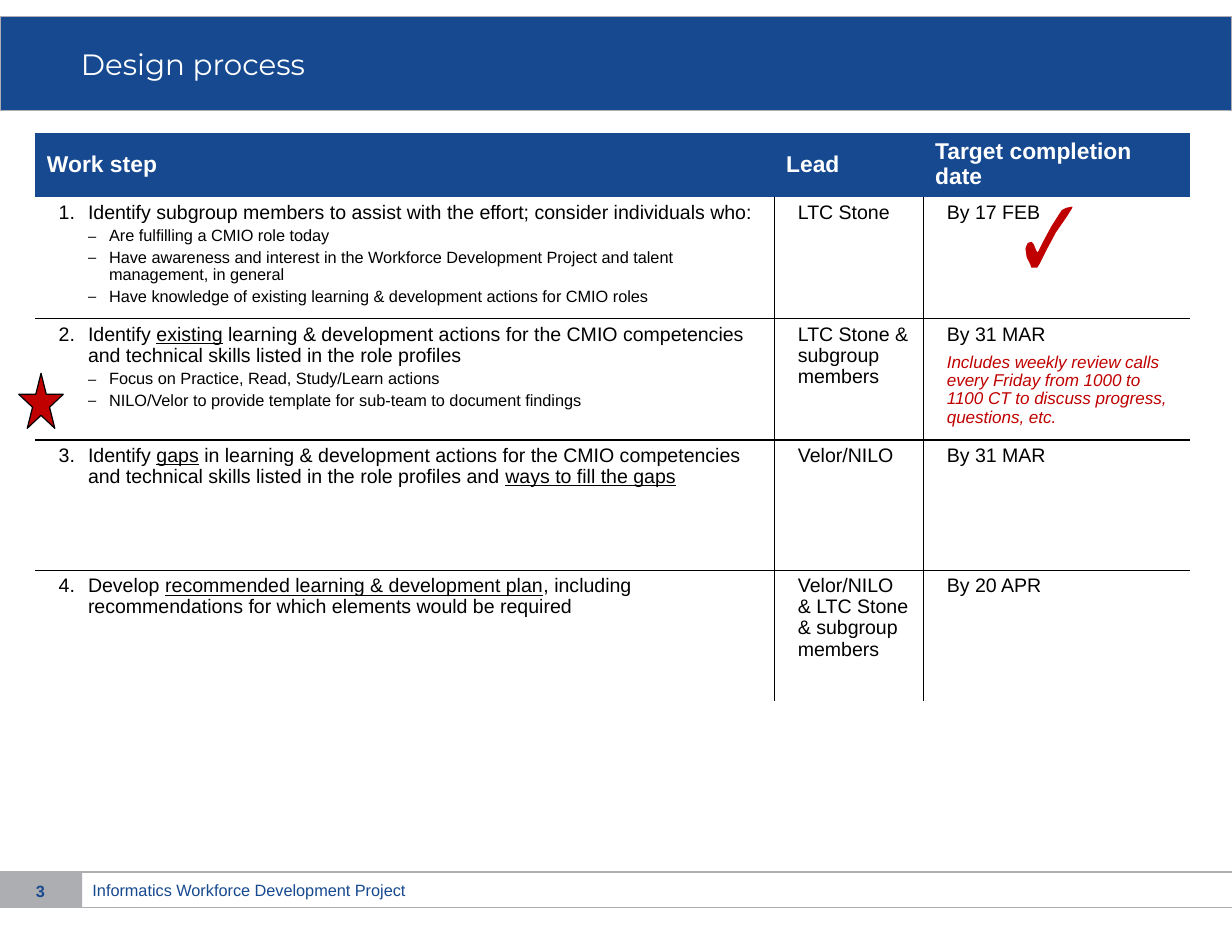
from lxml.etree import SubElement
from pptx import Presentation
from pptx.dml.color import RGBColor
from pptx.enum.shapes import MSO_CONNECTOR, MSO_SHAPE
from pptx.enum.text import MSO_ANCHOR, PP_ALIGN
from pptx.oxml.ns import qn
from pptx.util import Inches, Pt

BLUE = RGBColor(0x16, 0x49, 0x8F)
GRAY = RGBColor(0xAC, 0xAE, 0xB1)
RED = RGBColor(0xC0, 0x00, 0x00)
BLACK = RGBColor(0x00, 0x00, 0x00)
WHITE = RGBColor(0xFF, 0xFF, 0xFF)

prs = Presentation()
prs.slide_width, prs.slide_height = Inches(10.5), Inches(8)
COL, ROW = prs.slide_width // 1050, prs.slide_height // 800
s = prs.slides.add_slide(prs.slide_layouts[6])

FORMATS = {
    "title": {"size": Pt(18), "name": "Montserrat", "color": WHITE},
    "footer": {"size": Pt(10), "name": "Arial", "color": BLUE},
    "number": {"size": Pt(10), "name": "Arial", "color": BLUE, "bold": True},
    "head": {"size": Pt(14), "name": "Arial", "color": WHITE, "bold": True},
    "step": {"size": Pt(12), "name": "Arial", "color": BLACK},
    "dash": {"size": Pt(10), "name": "Arial", "color": BLACK},
    "plain": {"size": Pt(12), "name": "Arial", "color": BLACK},
    "note": {"size": Pt(10.5), "name": "Arial", "color": RED, "italic": True},
}
INDENTS = {"step": (0.25, -0.25), "dash": (0.43, -0.18)}


def write(p, text, style):
    for i, part in enumerate(text.split("_")):
        if not part:
            continue
        r = p.add_run()
        r.text = part
        for key, value in FORMATS[style].items():
            if key == "color":
                r.font.color.rgb = value
            else:
                setattr(r.font, key, value)
        if i % 2:
            r.font.underline = True


def add_box(at, fill=None, line=None, kind=MSO_SHAPE.RECTANGLE):
    x, y, w, h = at
    sp = s.shapes.add_shape(kind, x * COL, y * ROW, w * COL, h * ROW)
    sp.shadow.inherit = False
    for color, target in ((fill, sp.fill), (line, sp.line.fill)):
        if color is None:
            target.background()
        else:
            target.solid()
            target.fore_color.rgb = color
    if line is not None:
        sp.line.width = Pt(0.75)
    return sp


add_box((0, 743, 70, 30), GRAY)
for y in (743, 773):
    ln = s.shapes.add_connector(MSO_CONNECTOR.STRAIGHT, 0, y * ROW, 1050 * COL, y * ROW)
    ln.line.color.rgb = GRAY
    ln.line.width = Pt(0.75)
    SubElement(ln._element.spPr, qn("a:effectLst"))

add_box((0, 14, 1050, 80), BLUE, GRAY)
for at, text, style, align in (
    ((69, 14, 970, 80), "Design process", "title", PP_ALIGN.LEFT),
    ((69, 747, 650, 22), "Informatics Workforce Development Project", "footer", PP_ALIGN.LEFT),
    ((4, 746, 61, 27), "3", "number", PP_ALIGN.CENTER),
):
    x, y, w, h = at
    tf = s.shapes.add_textbox(x * COL, y * ROW, w * COL, h * ROW).text_frame
    tf.word_wrap = True
    tf.vertical_anchor = MSO_ANCHOR.MIDDLE
    tf.margin_left = 0 if style == "title" else Inches(0.1)
    p = tf.paragraphs[0]
    p.alignment = align
    write(p, text, style)

CELLS = [
    [[("head", "Work step")], [("head", "Lead")], [("head", "Target completion date")]],
    [
        [
            ("step", "Identify subgroup members to assist with the effort; consider individuals who:"),
            ("dash", "Are fulfilling a CMIO role today"),
            ("dash", "Have awareness and interest in the Workforce Development Project and talent management, in general"),
            ("dash", "Have knowledge of existing learning & development actions for CMIO roles"),
        ],
        [("plain", "LTC Stone")],
        [("plain", "By 17 FEB")],
    ],
    [
        [
            ("step", "Identify _existing_ learning & development actions for the CMIO competencies and technical skills listed in the role profiles"),
            ("dash", "Focus on Practice, Read, Study/Learn actions"),
            ("dash", "NILO/Velor to provide template for sub-team to document findings"),
        ],
        [("plain", "LTC Stone & subgroup members")],
        [
            ("plain", "By 31 MAR"),
            ("note", "Includes weekly review calls every Friday from 1000 to 1100 CT to discuss progress, questions, etc."),
        ],
    ],
    [
        [("step", "Identify _gaps_ in learning & development actions for the CMIO competencies and technical skills listed in the role profiles and _ways to fill the gaps_")],
        [("plain", "Velor/NILO")],
        [("plain", "By 31 MAR")],
    ],
    [
        [("step", "Develop _recommended learning & development plan_, including recommendations for which elements would be required")],
        [("plain", "Velor/NILO & LTC Stone & subgroup members")],
        [("plain", "By 20 APR")],
    ],
]
WIDTHS, HEIGHTS = (630, 127, 227), (53, 102, 101, 111, 111)
frame = s.shapes.add_table(5, 3, 30 * COL, 113 * ROW, sum(WIDTHS) * COL, sum(HEIGHTS) * ROW)
table = frame.table
table.first_row = table.horz_banding = False
table._tbl.tblPr.find(qn("a:tableStyleId")).text = "{2D5ABB26-0587-4C30-8999-92F81FD0307C}"
for column, width in zip(table.columns, WIDTHS):
    column.width = width * COL
for row, height in zip(table.rows, HEIGHTS):
    row.height = height * ROW

for i, cells in enumerate(CELLS):
    for j, paragraphs in enumerate(cells):
        cell = table.cell(i, j)
        if i == 0:
            cell.vertical_anchor = MSO_ANCHOR.MIDDLE
            cell.fill.solid()
            cell.fill.fore_color.rgb = BLUE
        else:
            cell.margin_left = Inches(0.2)
            tcPr = cell._tc.get_or_add_tcPr()
            sides = {"lnL": j > 0, "lnR": j < 2, "lnT": i > 1, "lnB": i < 4}
            for side, shown in sides.items():
                if shown:
                    ln = SubElement(tcPr, qn(f"a:{side}"), w=str(Pt(1)))
                    fill = SubElement(ln, qn("a:solidFill"))
                    SubElement(fill, qn("a:srgbClr"), val=str(BLACK))
            cell.fill.background()
        tf = cell.text_frame
        for k, (style, text) in enumerate(paragraphs):
            p = tf.paragraphs[0] if k == 0 else tf.add_paragraph()
            p.line_spacing = 0.96
            p.space_before = Pt(0 if k == 0 else 2.5 if style == "dash" else 5)
            write(p, text, style)
            if style in INDENTS:
                left, first = INDENTS[style]
                pPr = p._p.get_or_add_pPr()
                pPr.set("marL", str(Inches(left)))
                pPr.set("indent", str(Inches(first)))
                if style == "step":
                    SubElement(pPr, qn("a:buAutoNum"), type="arabicPeriod", startAt=str(i))
                else:
                    SubElement(pPr, qn("a:buSzPct"), val="90000")
                    SubElement(pPr, qn("a:buFont"), typeface="Arial")
                    SubElement(pPr, qn("a:buChar"), char="–")

CHECK = [
    (874, 212), (875, 209), (876, 207), (879, 206), (881, 208), (883, 213),
    (884, 215), (885, 214), (889, 206), (896, 193), (903, 182), (905, 179),
    (909, 177), (914, 176), (914, 177), (909, 185), (900, 198), (892, 213),
    (886, 225), (884, 228), (879, 228), (878, 225), (875, 219),
]
builder = s.shapes.build_freeform(*CHECK[0], scale=COL)
builder.add_line_segments(CHECK[1:], close=True)
check = builder.convert_to_shape()
check.shadow.inherit = False
check.fill.solid()
check.fill.fore_color.rgb = RED
check.line.fill.background()

add_box((16, 318, 38, 47), RED, BLACK, MSO_SHAPE.STAR_5_POINT)

prs.save("out.pptx")
